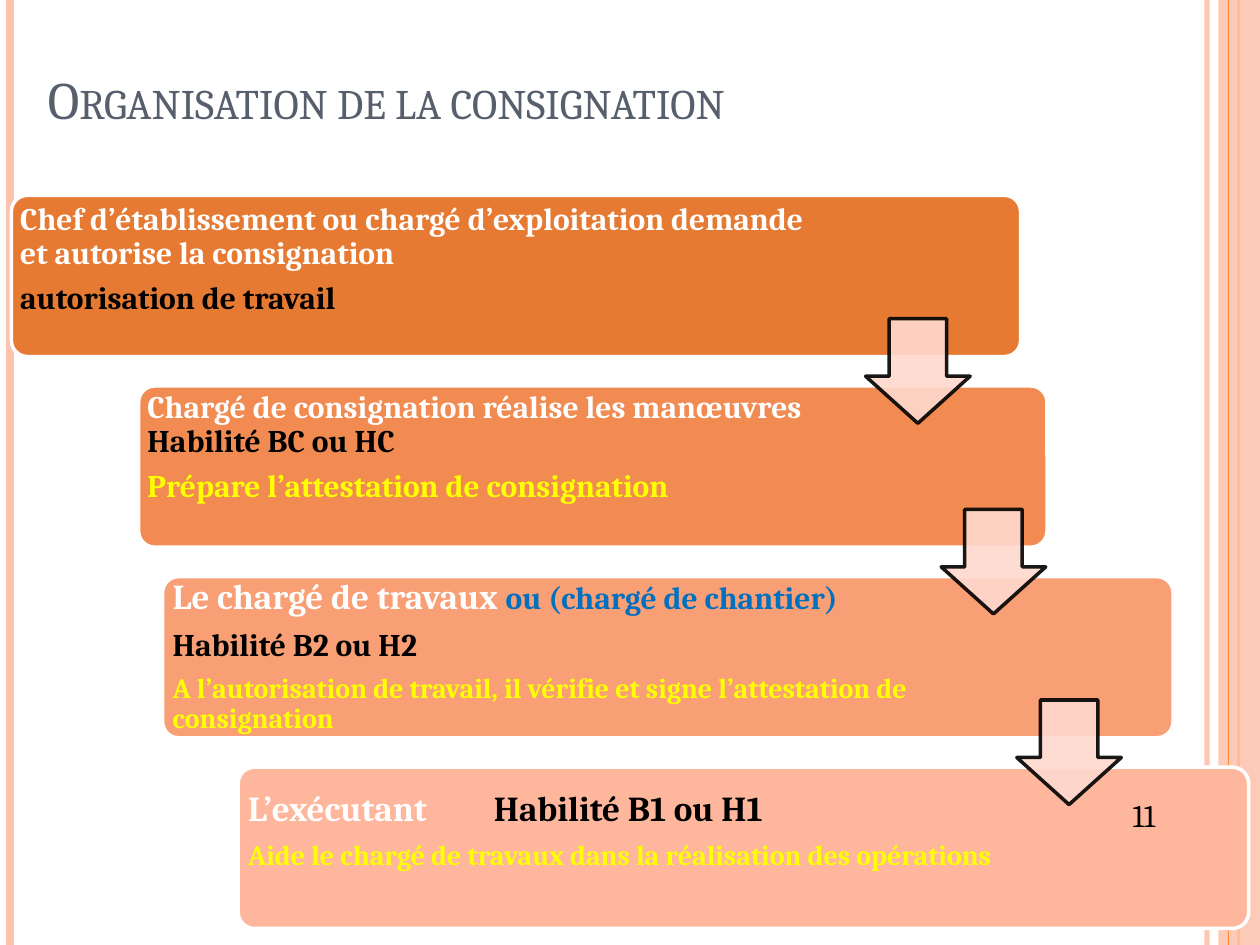
import pptx
import pptx.util
import pptx.dml.color
import pptx.enum.shapes
import pptx.enum.text
import pptx.oxml.ns
import lxml.etree

COLUMNS, ROWS = 100, 75
COLORS = {
    "white": "FFFFFF", "black": "000000", "slate": "575F6D",
    "yellow": "FFFF00", "blue": "0070C0", "orange": "FE8637",
    "peach": "FEC3AE", "blush": "FFD9CE",
    "step1": "E77A32", "step2": "F18B52", "step3": "F99F76", "step4": "FEB79C",
}
SHAPES = pptx.enum.shapes.MSO_SHAPE
ANCHOR = pptx.enum.text.MSO_ANCHOR
STEP_PITCH = 15.13


def rgb(name):
    return pptx.dml.color.RGBColor.from_string(COLORS[name])


def add_child(parent, tag, **attributes):
    child = lxml.etree.SubElement(parent, pptx.oxml.ns.qn(tag))
    for name, value in attributes.items():
        child.set(name, str(value))
    return child


class SlideBuilder:
    def __init__(self, deck):
        self.deck = deck
        self.font = "Cambria"
        self.page = deck.slides.add_slide(deck.slide_layouts[5])

    def x(self, columns):
        return round(self.deck.slide_width * columns / COLUMNS)

    def y(self, rows):
        return round(self.deck.slide_height * rows / ROWS)

    def area(self, left, top, width, height):
        return self.x(left), self.y(top), self.x(width), self.y(height)

    def fade(self, fill, percent):
        for color in fill._xPr.iter(pptx.oxml.ns.qn("a:srgbClr")):
            add_child(color, "a:alpha", val=percent * 1000)

    def span(self, para, text, color, size, bold=False):
        span = para.add_run()
        span.text = text
        values = {"name": self.font, "size": pptx.util.Pt(size), "bold": bold}
        for name, value in values.items():
            setattr(span.font, name, value)
        span.font.color.rgb = rgb(color)
        return span

    def title(self, text, area):
        box = self.page.shapes.title
        box.left, box.top, box.width, box.height = self.area(*area)
        box.text_frame.vertical_anchor = ANCHOR.BOTTOM
        para = box.text_frame.paragraphs[0]
        para.alignment = pptx.enum.text.PP_ALIGN.LEFT
        span = self.span(para, text, "slate", 30)
        span.font._element.set("cap", "small")

    def rule(self, column, color, width, opacity=100):
        line = self.page.shapes.add_connector(
            pptx.enum.shapes.MSO_CONNECTOR.STRAIGHT,
            self.x(column), 0, self.x(column), self.y(ROWS))
        line.line.color.rgb = rgb(color)
        line.line.width = pptx.util.Pt(width)
        self.fade(line.line.fill, opacity)
        add_child(line._element.spPr, "a:effectLst")

    def shape(self, kind, area, fill, outline=None, adjustments=(), opacity=100):
        shape = self.page.shapes.add_shape(kind, *self.area(*area))
        shape.shadow.inherit = False
        for index, value in enumerate(adjustments):
            shape.adjustments[index] = value
        shape.fill.solid()
        shape.fill.fore_color.rgb = rgb(fill)
        self.fade(shape.fill, opacity)
        if outline:
            shape.line.color.rgb = rgb(outline)
            shape.line.width = pptx.util.Pt(2)
            if opacity < 100:
                self.fade(shape.line.fill, opacity)
        else:
            shape.line.fill.background()

    def text(self, area, paragraphs, margins=(1, 0.5), spacing=1.0, after=0, tab=None):
        box = self.page.shapes.add_textbox(*self.area(*area))
        frame = box.text_frame
        side, top = self.x(margins[0]), self.y(margins[1])
        values = {"word_wrap": True, "vertical_anchor": ANCHOR.TOP,
                  "margin_left": side, "margin_right": side,
                  "margin_top": top, "margin_bottom": 0}
        for name, value in values.items():
            setattr(frame, name, value)
        for index, spans in enumerate(paragraphs):
            para = frame.add_paragraph() if index else frame.paragraphs[0]
            if tab and any("\t" in span[0] for span in spans):
                tabs = add_child(para._p.get_or_add_pPr(), "a:tabLst")
                add_child(tabs, "a:tab", pos=self.x(tab), algn="l")
            para.line_spacing = spacing
            para.space_after = pptx.util.Pt(after * max(span[2] for span in spans))
            for position, span in enumerate(spans):
                if position and span[0].startswith("\v"):
                    para.add_line_break()
                self.span(para, span[0].lstrip("\v"), *span[1:])

    def step(self, index, left, width, margins, paragraphs):
        top = 15.5 + STEP_PITCH * index
        self.shape(SHAPES.ROUNDED_RECTANGLE, (left, top, width, 12.8),
                   f"step{index + 1}", "white", [0.1])
        bold_paragraphs = [[(*span, True) for span in spans] for spans in paragraphs]
        self.text((left, top, width * 0.803, 12.8), bold_paragraphs,
                  margins, 0.9, 0.35, 19.5)

    def arrow(self, index):
        area = (68.7 + 6 * index, 25.3 + STEP_PITCH * index, 8.3, 8.3)
        self.shape(SHAPES.DOWN_ARROW, area, "blush", "black", [0.55, 0.45], 90)


STEPS = [
    (0.9, 80.1, (0.7, 0.6), [
        [("Chef d’établissement ou chargé d’exploitation demande et autorise la consignation", "white", 18)],
        [("autorisation de travail", "black", 18)]]),
    (11, 72.1, (0.7, 0.4), [
        [("Chargé de consignation réalise les manœuvres", "white", 18),
         ("\vHabilité BC ou HC", "black", 18)],
        [("Prépare l’attestation de consignation", "yellow", 18)]]),
    (12.9, 80.2, (0.8, 0.2), [
        [("Le chargé de travaux ", "white", 20), ("ou (chargé de chantier)", "blue", 18)],
        [("Habilité B2 ou H2", "black", 18)],
        [("A l’autorisation de travail, il vérifie et signe l’attestation de consignation", "yellow", 16)]]),
    (18.9, 80.2, (0.8, 1.9), [
        [("L’exécutant\t", "white", 20), ("Habilité B1 ou H1", "black", 20)],
        [("Aide le chargé de travaux dans la réalisation des opérations", "yellow", 16)]]),
]


def main():
    deck = pptx.Presentation()
    deck.slide_width = pptx.util.Inches(10)
    deck.slide_height = pptx.util.Inches(7.5)
    slide = SlideBuilder(deck)
    slide.rule(95.8, "peach", 3, 93)
    slide.rule(0.8, "peach", 4.5)
    slide.rule(98.3, "orange", 1.5)
    slide.shape(SHAPES.RECTANGLE, (96.7, 0, 3.3, ROWS), "peach", opacity=87)
    slide.rule(97.5, "orange", 0.75)
    slide.title("Organisation de la consignation", (2.8, 2.9, 81.7, 7.9))
    for index, step in enumerate(STEPS):
        slide.step(index, *step)
    for index in range(len(STEPS) - 1):
        slide.arrow(index)
    slide.text((88.9, 62.7, 6.7, 5.7), [[("11", "black", 18)]])
    deck.save("out.pptx")


if __name__ == "__main__":
    main()
